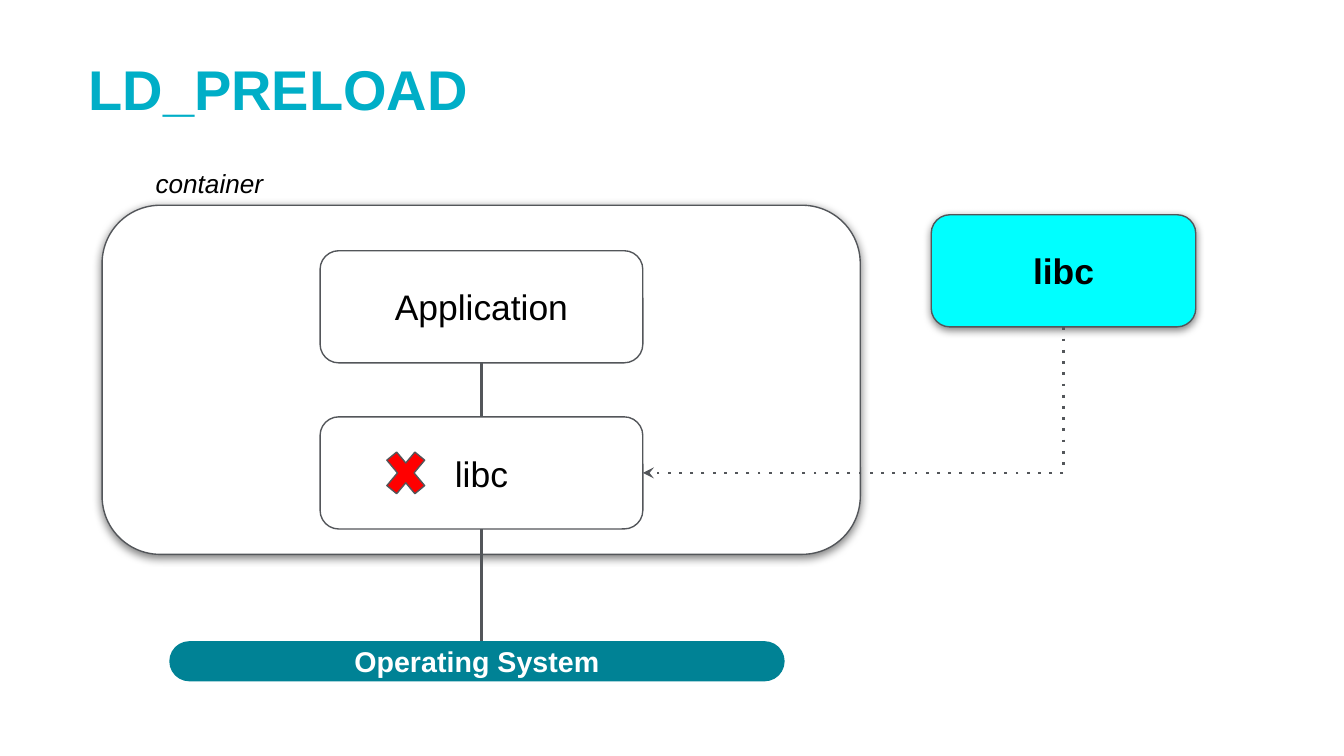
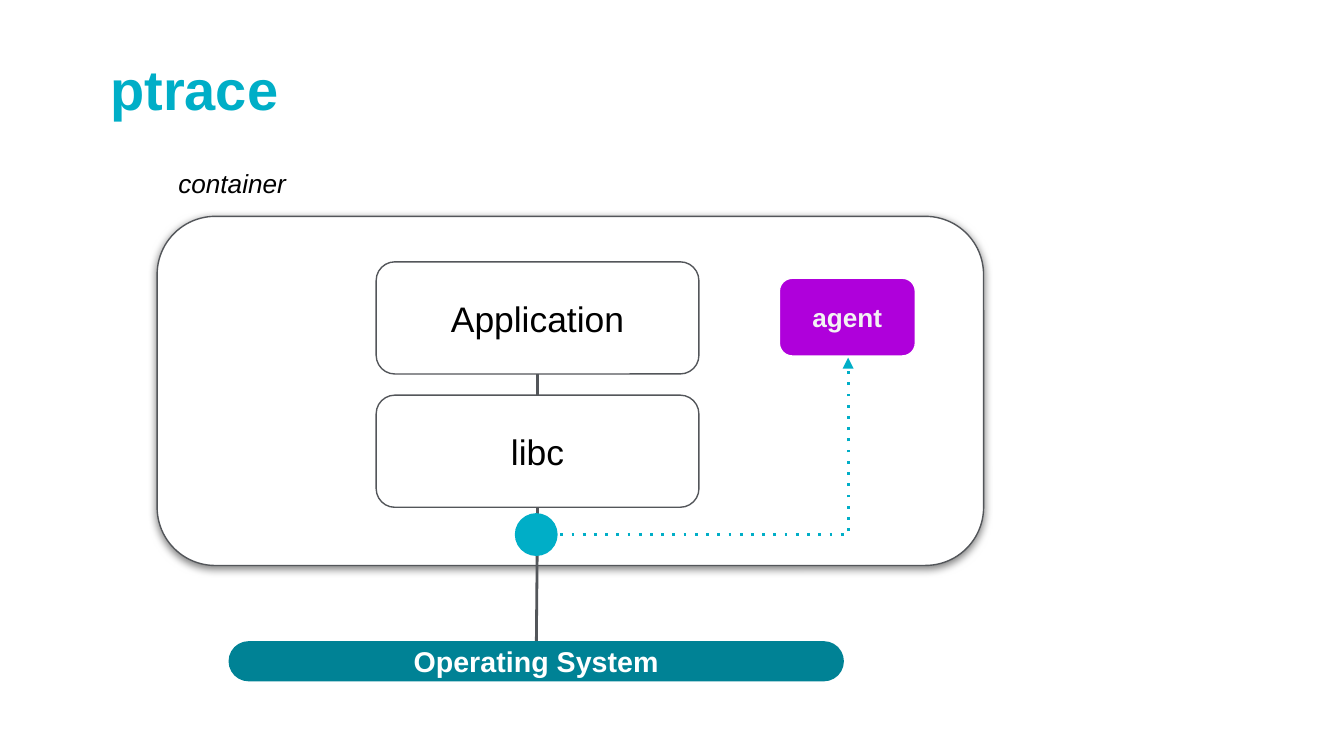
import pptx
import pptx.util
import pptx.dml.color
import pptx.enum.shapes
import pptx.enum.text
from lxml import etree
from pptx.oxml.ns import qn

Cm, Pt = pptx.util.Cm, pptx.util.Pt
RGBColor = pptx.dml.color.RGBColor
SHAPE = pptx.enum.shapes.MSO_SHAPE
CONNECTOR = pptx.enum.shapes.MSO_CONNECTOR
ALIGN = pptx.enum.text.PP_ALIGN
ANCHOR = pptx.enum.text.MSO_ANCHOR

FONT = "Arial"
TEAL = RGBColor(0x00, 0xAE, 0xC7)
DARK_TEAL = RGBColor(0x00, 0x82, 0x95)
GRAY = RGBColor(0x53, 0x56, 0x5A)
CYAN = RGBColor(0x00, 0xFF, 0xFF)
PURPLE = RGBColor(0xAF, 0x00, 0xDB)
RED = RGBColor(0xFF, 0x00, 0x00)
PALE = RGBColor(0xF3, 0xF3, 0xF3)
WHITE = RGBColor(0xFF, 0xFF, 0xFF)
BLACK = RGBColor(0x00, 0x00, 0x00)

BOX_W, BOX_H = 6.1, 2.12
OS_TOP = 12.12


def add_box(s, kind, at, fill, line=None, shadow=False, text="", size=19, color=BLACK, bold=False):
    """Add a preset shape at (left, top, width, height) in cm with centred text."""
    sp = s.shapes.add_shape(kind, *[Cm(v) for v in at])
    sp.fill.solid()
    sp.fill.fore_color.rgb = fill
    if line is None:
        sp.line.fill.background()
    else:
        sp.line.color.rgb = line
        sp.line.width = Pt(0.75)
    sp.shadow.inherit = False
    if shadow:
        effects = sp._element.spPr.find(qn("a:effectLst"))
        outer = etree.SubElement(effects, qn("a:outerShdw"), blurRad=str(Pt(4.5)),
                                 dist=str(Pt(1.5)), dir="5400000", algn="bl", rotWithShape="0")
        rgb = etree.SubElement(outer, qn("a:srgbClr"), val=str(BLACK))
        etree.SubElement(rgb, qn("a:alpha"), val="50000")
    if text:
        tf = sp.text_frame
        tf.word_wrap = True
        tf.vertical_anchor = ANCHOR.MIDDLE
        p = tf.paragraphs[0]
        p.text = text
        p.alignment = ALIGN.CENTER
        f = p.runs[0].font
        f.name, f.size, f.bold, f.color.rgb = FONT, Pt(size), bold, color
    return sp


def style_line(sp, color, head=None):
    """Format a line; one with an arrowhead is also dotted."""
    sp.line.color.rgb = color
    sp.line.width = Pt(1.5)
    spPr = sp._element.spPr
    if head:
        ln = spPr.find(qn("a:ln"))
        etree.SubElement(ln, qn("a:prstDash"), val="dot")
        etree.SubElement(ln, qn("a:tailEnd"), type=head)
    etree.SubElement(spPr, qn("a:effectLst"))


prs = pptx.Presentation()
prs.slide_width, prs.slide_height = Cm(25.4), Cm(14.29)

# title, title left, container, box left, box tops, line end, label left, OS left
stacks = [
    ("LD_PRELOAD", 1.42, (1.93, 3.88, 14.33, 6.6), 6.05, (4.74, 7.88), (9.1, 12.37), 2.69, 3.2),
    ("ptrace", 1.83, (2.97, 4.09, 15.62, 6.6), 7.11, (4.95, 7.47), (10.13, 12.83), 3.12, 4.32),
]
slides = []
for title, title_x, container, box_x, (app_y, libc_y), line_end, label_x, os_x in stacks:
    s = prs.slides.add_slide(prs.slide_layouts[5])
    slides.append(s)

    sp = s.shapes.title
    sp.left, sp.top, sp.width, sp.height = Cm(title_x), Cm(0.33), Cm(23.14), Cm(2.84)
    tf = sp.text_frame
    tf.text = title
    tf.word_wrap = True
    tf.auto_size = pptx.enum.text.MSO_AUTO_SIZE.NONE
    tf.vertical_anchor = ANCHOR.MIDDLE
    p = tf.paragraphs[0]
    p.alignment = ALIGN.LEFT
    p.line_spacing = 0.9
    f = p.runs[0].font
    f.name, f.size, f.bold, f.color.rgb = FONT, Pt(30), True, TEAL

    add_box(s, SHAPE.ROUNDED_RECTANGLE, container, WHITE, GRAY, shadow=True)
    for name, y in (("Application", app_y), ("libc", libc_y)):
        add_box(s, SHAPE.ROUNDED_RECTANGLE, (box_x, y, BOX_W, BOX_H), WHITE, GRAY, text=name)

    mid_x = box_x + BOX_W / 2
    for start, end in (((mid_x, app_y + BOX_H), (mid_x, libc_y)),
                       ((mid_x, libc_y + BOX_H), line_end)):
        line = s.shapes.add_connector(CONNECTOR.STRAIGHT, *[Cm(v) for v in start + end])
        style_line(line, GRAY)

    label = s.shapes.add_textbox(Cm(label_x), Cm(2.92), Cm(3.23), Cm(0.53))
    tf = label.text_frame
    tf.word_wrap = True
    tf.margin_top = tf.margin_bottom = Cm(0.25)
    tf.text = "container"
    f = tf.paragraphs[0].runs[0].font
    f.name, f.size, f.italic, f.color.rgb = FONT, Pt(14), True, BLACK

    bar = add_box(s, SHAPE.ROUNDED_RECTANGLE, (os_x, OS_TOP, 11.63, 0.76), DARK_TEAL,
                  text="Operating System", size=15.3, color=WHITE, bold=True)
    bar.adjustments[0] = 0.5

preload, ptrace = slides

# LD_PRELOAD: the preloaded libc replaces the one in the container
add_box(preload, SHAPE.ROUNDED_RECTANGLE, (17.6, 4.06, 5, BOX_H), CYAN, GRAY,
        shadow=True, text="libc", bold=True)
add_box(preload, SHAPE.MATH_MULTIPLY, (7.16, 8.33, 1.02, 1.22), RED, GRAY)

# A one-bend elbow, turned a quarter so that it runs down and then left
from_x, from_y, to_x, to_y = 20.1, 6.19, 12.15, 8.94
w, h = to_y - from_y, from_x - to_x
left, top = (from_x + to_x - w) / 2, (from_y + to_y - h) / 2
elbow = preload.shapes.add_connector(CONNECTOR.ELBOW, Cm(left), Cm(top), Cm(left + w), Cm(top + h))
spPr = elbow._element.spPr
spPr.find(qn("a:xfrm")).set("rot", "5400000")
spPr.find(qn("a:prstGeom")).set("prst", "bentConnector2")
style_line(elbow, GRAY, "stealth")

# ptrace: the agent intercepts calls between libc and the system
add_box(ptrace, SHAPE.ROUNDED_RECTANGLE, (14.73, 5.26, 2.57, 1.47), PURPLE, WHITE,
        text="agent", size=14, color=PALE, bold=True)
add_box(ptrace, SHAPE.OVAL, (9.73, 9.7, 0.81, 0.81), TEAL)
builder = ptrace.shapes.build_freeform(Cm(10.59), Cm(10.11))
builder.add_line_segments([(Cm(16.03), Cm(10.11)), (Cm(16.03), Cm(6.76))], close=False)
trace = builder.convert_to_shape()
trace.fill.background()
style_line(trace, TEAL, "triangle")

prs.save("out.pptx")
